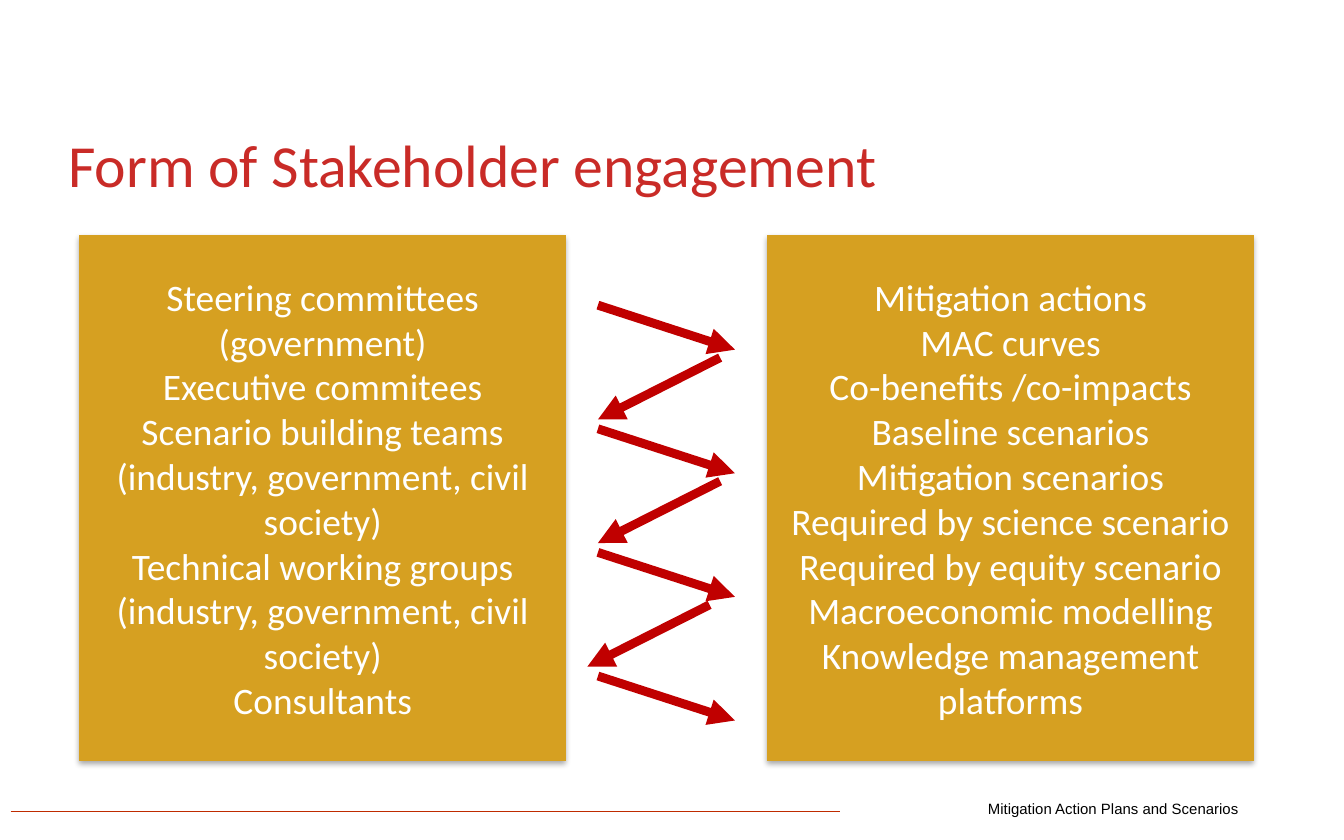
from lxml import etree
from pptx import Presentation
from pptx.dml.color import RGBColor
from pptx.enum.shapes import MSO_CONNECTOR, MSO_SHAPE
from pptx.enum.text import MSO_ANCHOR, PP_ALIGN
from pptx.oxml import parse_xml
from pptx.oxml.ns import nsdecls, qn
from pptx.util import Cm, Pt

WHITE = RGBColor(0xFF, 0xFF, 0xFF)
BLACK = RGBColor(0x00, 0x00, 0x00)
RED = RGBColor(0xC9, 0x2B, 0x27)
GOLD = RGBColor(0xD6, 0xA0, 0x21)
ARROW_RED = RGBColor(0xC0, 0x00, 0x00)
RULE_RED = RGBColor(0xBF, 0x2B, 0x00)

STAKEHOLDERS = [
    "Steering committees (government)",
    "Executive commitees",
    "Scenario building teams (industry, government, civil society)",
    "Technical working groups (industry, government, civil society)",
    "Consultants",
]
OUTPUTS = [
    "Mitigation actions",
    "MAC curves",
    "Co-benefits /co-impacts",
    "Baseline scenarios",
    "Mitigation scenarios",
    "Required by science scenario",
    "Required by equity scenario",
    "Macroeconomic modelling",
    "Knowledge management platforms",
]


def write(tf, lines, size, font, color, align=PP_ALIGN.LEFT):
    tf.word_wrap = True
    tf.vertical_anchor = MSO_ANCHOR.MIDDLE
    for i, line in enumerate(lines):
        p = tf.paragraphs[0] if i == 0 else tf.add_paragraph()
        p.alignment = align
        r = p.add_run()
        r.text = line
        r.font.size = Pt(size)
        r.font.name = font
        r.font.color.rgb = color


def add_line(s, x1, y1, x2, y2, color, width):
    line = s.shapes.add_connector(
        MSO_CONNECTOR.STRAIGHT, Cm(x1), Cm(y1), Cm(x2), Cm(y2))
    line.line.color.rgb = color
    line.line.width = Pt(width)
    etree.SubElement(line._element.spPr, qn("a:effectLst"))
    return line


def add_arrow(s, x1, y1, x2, y2):
    arrow = add_line(s, x1, y1, x2, y2, ARROW_RED, 4.75)
    etree.SubElement(arrow.line._get_or_add_ln(), qn("a:tailEnd"), type="triangle")


def add_footer(s, left, top, width, height):
    add_line(s, left, top + 0.35, left + 15.67, top + 0.35, RULE_RED, 0.75)
    tb = s.shapes.add_textbox(
        Cm(left + 18.22), Cm(top), Cm(width - 18.22), Cm(height))
    write(tb.text_frame, ["Mitigation Action Plans and Scenarios"], 8, "Arial", BLACK)


def add_title(s, left, top, width, height):
    tb = s.shapes.add_textbox(Cm(left), Cm(top), Cm(width), Cm(height))
    write(tb.text_frame, ["Form of Stakeholder engagement"], 32, "Calibri", RED)


def add_panel(s, lines, left, top, width, height):
    sp = s.shapes.add_shape(
        MSO_SHAPE.FLOWCHART_PROCESS, Cm(left), Cm(top), Cm(width), Cm(height))
    sp.fill.solid()
    sp.fill.fore_color.rgb = GOLD
    sp.line.fill.background()
    sp.shadow.inherit = False
    sp._element.spPr.find(qn("a:effectLst")).append(parse_xml(
        f'<a:outerShdw {nsdecls("a")} blurRad="{Pt(3.1)}" dist="{Pt(1.8)}" '
        'dir="5400000" rotWithShape="0"><a:srgbClr val="000000">'
        '<a:alpha val="35000"/></a:srgbClr></a:outerShdw>'))
    write(sp.text_frame, lines, 20, "Calibri", WHITE, PP_ALIGN.CENTER)


def add_zigzag(s, left, top, width, height, rounds=4):
    step = (height - 0.84) / (rounds - 1)
    for i in range(rounds):
        y = top + i * step
        add_arrow(s, left, y, left + width, y + 0.84)
    for i in range(rounds - 1):
        y = top + i * step
        x = left - 0.2 if i == rounds - 2 else left
        add_arrow(s, x + width - 0.28, y + 0.99, x, y + 2.16)


def main():
    prs = Presentation()
    prs.slide_width, prs.slide_height = Cm(25.4), Cm(15.88)
    s = prs.slides.add_slide(prs.slide_layouts[6])
    add_footer(s, 0.2, 14.99, 25.2, 0.61)
    add_title(s, 1.04, 1.78, 21.59, 2.64)
    add_panel(s, OUTPUTS, 14.5, 4.45, 9.2, 9.93)
    add_panel(s, STAKEHOLDERS, 1.5, 4.45, 9.2, 9.93)
    add_zigzag(s, 11.3, 5.77, 2.59, 7.85)
    prs.save("out.pptx")


if __name__ == "__main__":
    main()
